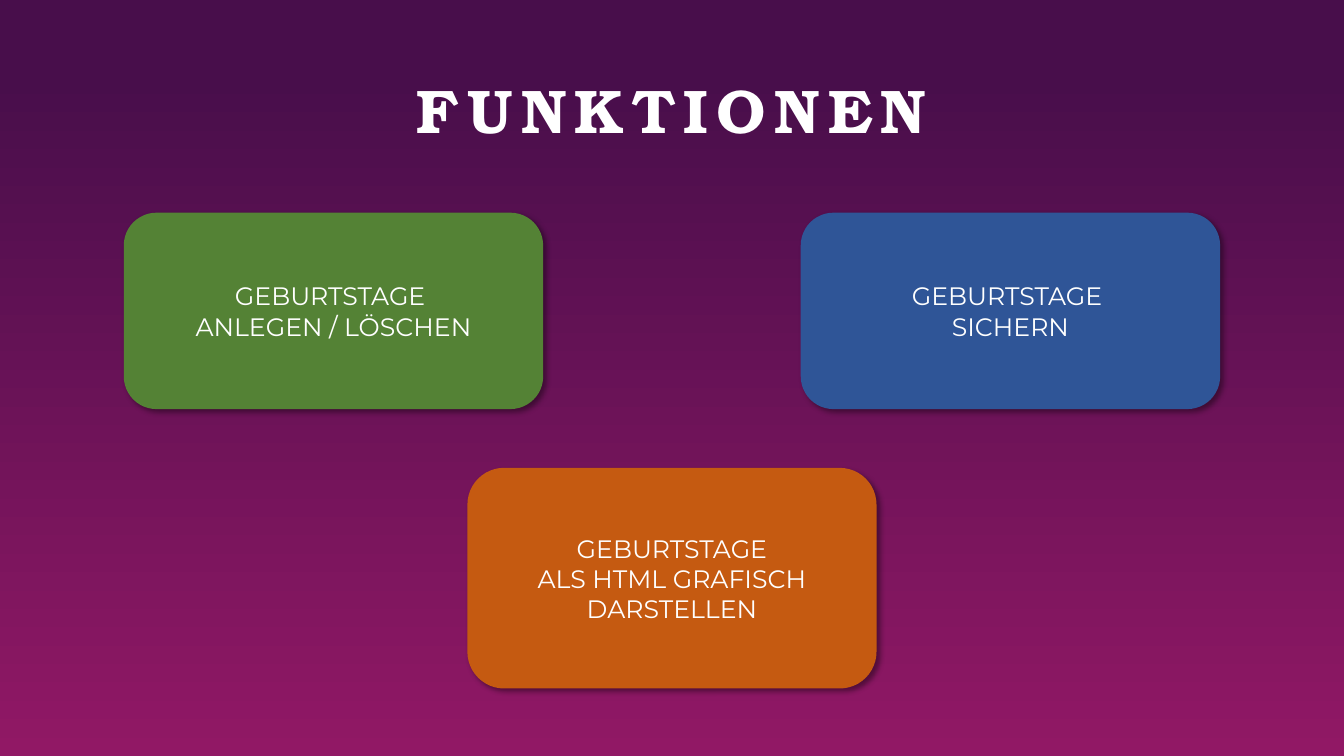
from lxml import etree
from pptx import Presentation
from pptx.dml.color import RGBColor
from pptx.enum.shapes import MSO_SHAPE
from pptx.enum.text import MSO_ANCHOR, PP_ALIGN
from pptx.oxml import parse_xml
from pptx.oxml.ns import nsdecls, qn
from pptx.util import Cm, Pt

SLIDE_WIDTH, SLIDE_HEIGHT = 33.87, 19.05
WHITE = "FFFFFF"
SHADOW = f"""<a:effectLst {nsdecls('a')}>
  <a:outerShdw blurRad="{Pt(4)}" dist="{Pt(3)}" dir="2700000" algn="tl" rotWithShape="0">
    <a:srgbClr val="000000"><a:alpha val="40000"/></a:srgbClr>
  </a:outerShdw>
</a:effectLst>"""


def color(hex_code):
    """Turn a hex string into a colour."""
    return RGBColor.from_string(hex_code)


def paint_background(slide):
    """Fill the slide with a gradient running from top to bottom."""
    fill = slide.background.fill
    fill.gradient()
    fill.gradient_angle = 270
    stops = ((0.1, "480E4B"), (1, "911865"))
    for stop, (position, hex_code) in zip(fill.gradient_stops, stops):
        stop.position = position
        stop.color.rgb = color(hex_code)


def write_text(shape, text, font_name, size):
    """Write white text centred both ways inside a shape."""
    frame = shape.text_frame
    frame.word_wrap = True
    frame.vertical_anchor = MSO_ANCHOR.MIDDLE
    frame.text = text
    for paragraph in frame.paragraphs:
        paragraph.alignment = PP_ALIGN.CENTER
        paragraph.font.name = font_name
        paragraph.font.size = Pt(size)
        paragraph.font.color.rgb = color(WHITE)


def add_title(slide, box, text):
    """Place the bold, letter-spaced title in its box."""
    title = slide.shapes.add_textbox(*map(Cm, box))
    write_text(title, text, "TeX Gyre Bonum", 44)
    paragraph = title.text_frame.paragraphs[0]
    paragraph.line_spacing = 0.9
    paragraph.font.bold = True
    paragraph.runs[0].font.bold = True
    title.text_frame._txBody.find(".//" + qn("a:rPr")).set("spc", "600")


def add_function_card(slide, box, hex_code, text):
    """Place a rounded, shadowed card naming one function."""
    card = slide.shapes.add_shape(MSO_SHAPE.ROUNDED_RECTANGLE, *map(Cm, box))
    card.fill.solid()
    card.fill.fore_color.rgb = color(hex_code)
    card.line.fill.background()
    card._element.spPr.append(parse_xml(SHADOW))
    write_text(card, text, "Montserrat", 18)


def add_function_cards(slide, top):
    """Place two cards mirrored on the slide and one centred below them."""
    margin, width, height = 3.12, 10.57, 4.95
    lower_width, lower_height, lower_offset = 10.31, 5.56, 6.43
    right = SLIDE_WIDTH - margin - width
    middle = (SLIDE_WIDTH - lower_width) / 2
    cards = (
        ((margin, top, width, height), "548235", "GEBURTSTAGE \vANLEGEN / LÖSCHEN"),
        ((right, top, width, height), "2F5597", "GEBURTSTAGE \vSICHERN"),
        ((middle, top + lower_offset, lower_width, lower_height), "C55A11",
         "GEBURTSTAGE\nALS HTML GRAFISCH DARSTELLEN"),
    )
    for box, hex_code, text in cards:
        add_function_card(slide, box, hex_code, text)


def main():
    """Build and save the presentation."""
    presentation = Presentation()
    presentation.slide_width = Cm(SLIDE_WIDTH)
    presentation.slide_height = Cm(SLIDE_HEIGHT)
    slide = presentation.slides.add_slide(presentation.slide_layouts[6])
    paint_background(slide)
    add_title(slide, (2.33, 1.02, 29.21, 3.68), "FUNKTIONEN")
    add_function_cards(slide, 5.36)
    presentation.save("out.pptx")


if __name__ == "__main__":
    main()
